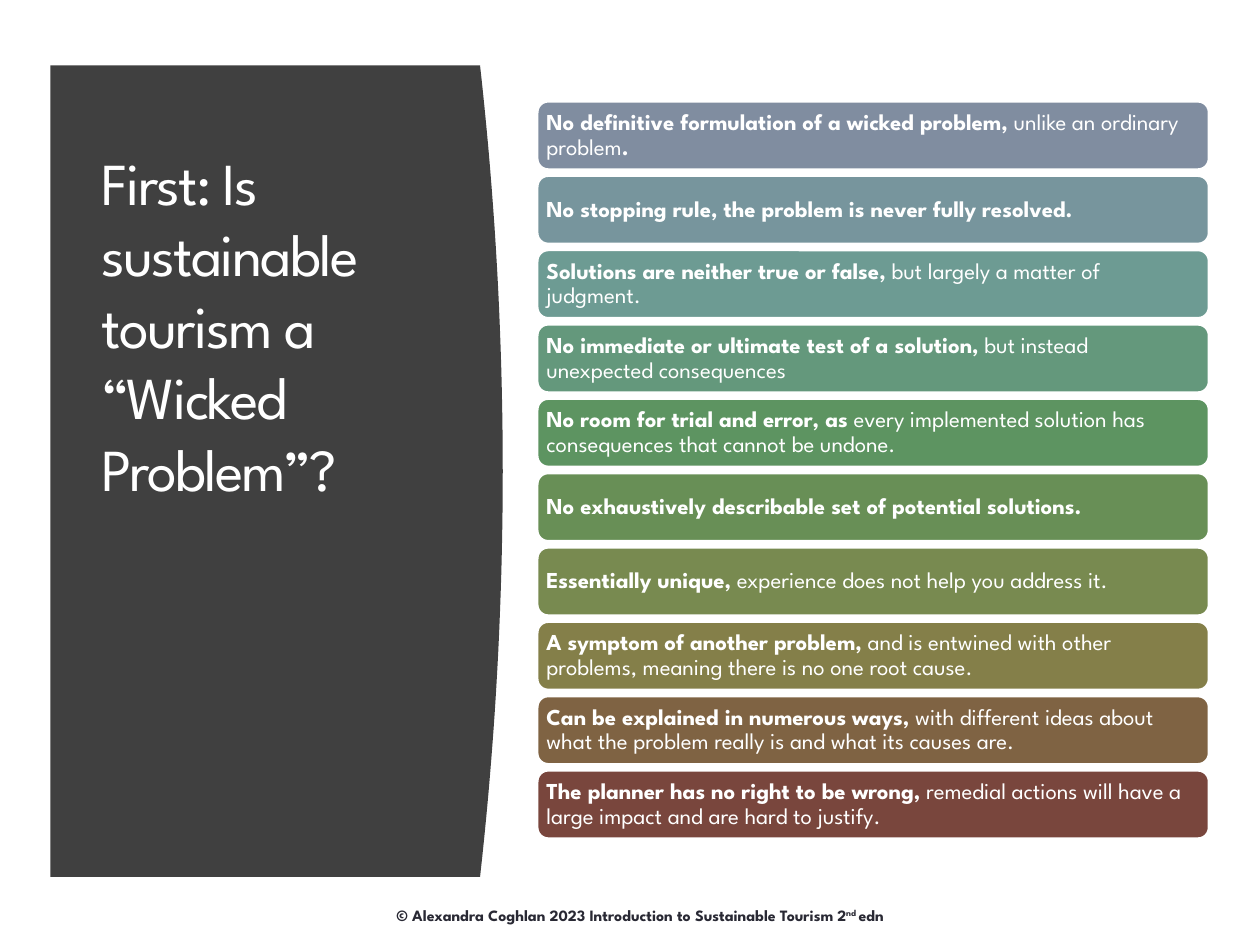
from dataclasses import dataclass

import pptx
import pptx.dml.color
import pptx.enum.shapes
import pptx.enum.text
import pptx.util

Inches = pptx.util.Inches
Pt = pptx.util.Pt
ALIGN = pptx.enum.text.PP_ALIGN
ANCHOR = pptx.enum.text.MSO_ANCHOR


@dataclass(frozen=True)
class Theme:
    font: str = "League Spartan"
    light: str = "FFFFFF"
    dark: str = "292934"
    panel: str = "404040"
    title_size: float = 34
    body_size: float = 13
    footer_size: float = 9


THEME = Theme()

# Band colour, bold lead, plain continuation, bold ending
TRAITS = [
    ("808DA0", "No definitive formulation of a wicked problem, ",
     "unlike an ordinary problem", "."),
    ("77959D", "No stopping rule, the problem is never fully resolved.", "", ""),
    ("6D9B93", "Solutions are neither true or false, ",
     "but largely a matter of judgment.", ""),
    ("64987C", "No immediate or ultimate test of a solution, ",
     "but instead unexpected consequences", ""),
    ("5D9461", "No room for trial and error, as ",
     "every implemented solution has consequences that cannot be undone.", ""),
    ("688F56", "No exhaustively describable set of potential solutions.", "", ""),
    ("788A50", "Essentially unique,",
     " experience does not help you address it.", ""),
    ("847F49", "A symptom of another problem, ",
     "and is entwined with other problems, meaning there is no one root cause.", ""),
    ("7F6343", "Can be explained in numerous ways, ",
     "with different ideas about what the problem really is "
     "and what its causes are.", ""),
    ("79463D", "The planner has no right to be wrong, ",
     "remedial actions will have a large impact and are hard to justify.", ""),
]


def rgb(code):
    return pptx.dml.color.RGBColor.from_string(code)


def apply(target, values):
    for name, value in values.items():
        setattr(target, name, value)


def add_run(paragraph, words, size, color, bold=False):
    run = paragraph.add_run()
    run.text = words
    apply(run.font, {"name": THEME.font, "size": Pt(size), "bold": bold})
    run.font.color.rgb = rgb(color)
    return run


def add_text_box(slide, left, top, width, height):
    box = slide.shapes.add_textbox(
        Inches(left), Inches(top), Inches(width), Inches(height))
    box.text_frame.word_wrap = True
    return box.text_frame.paragraphs[0]


def add_panel(slide, left=0.4, top=0.52, edge=3.81, bulge=0.18, height=6.44):
    """Draw the dark panel, its right edge bowed outwards as a parabola."""
    steps = 40
    curve = []
    for step in range(steps + 1):
        offset = 2 * step / steps - 1
        curve.append((Inches(edge + bulge * (1 - offset ** 2)),
                      Inches(top + height * step / steps)))
    outline = slide.shapes.build_freeform(Inches(left), Inches(top))
    outline.add_line_segments(curve + [(Inches(left), Inches(top + height))])
    panel = outline.convert_to_shape()
    panel.shadow.inherit = False
    panel.fill.solid()
    panel.fill.fore_color.rgb = rgb(THEME.panel)
    panel.line.fill.background()


def add_title(slide):
    paragraph = add_text_box(slide, 0.71, 1.11, 2.8, 5.24)
    title = add_run(paragraph, "First: Is sustainable tourism a “Wicked Problem”?",
                    THEME.title_size, THEME.light)
    title.font._element.set("spc", "-100")


def add_band(slide, top, color, lead, detail, ending):
    band = slide.shapes.add_shape(
        pptx.enum.shapes.MSO_SHAPE.ROUNDED_RECTANGLE,
        Inches(4.26), Inches(top), Inches(5.34), Inches(0.55))
    band.shadow.inherit = False
    band.fill.solid()
    band.fill.fore_color.rgb = rgb(color)
    band.line.color.rgb = rgb(THEME.light)
    band.line.width = Pt(2.08)
    inset = Inches(0.05)
    apply(band.text_frame, {
        "word_wrap": True, "vertical_anchor": ANCHOR.MIDDLE,
        "margin_left": inset, "margin_right": inset,
        "margin_top": inset, "margin_bottom": inset})
    paragraph = band.text_frame.paragraphs[0]
    apply(paragraph, {"alignment": ALIGN.LEFT, "line_spacing": 0.9})
    for words, bold in ((lead, True), (detail, False), (ending, True)):
        if words:
            add_run(paragraph, words, THEME.body_size, THEME.light, bold)


def add_footer(slide):
    paragraph = add_text_box(slide, 2.72, 7.14, 4.72, 0.25)
    paragraph.alignment = ALIGN.CENTER
    credit = "© Alexandra Coghlan 2023 Introduction to Sustainable Tourism 2"
    for words, raised in ((credit, False), ("nd ", True), ("edn", False)):
        run = add_run(paragraph, words, THEME.footer_size, THEME.dark, True)
        if raised:
            run.font._element.set("baseline", "30000")


def main():
    deck = pptx.Presentation()
    apply(deck, {"slide_width": Inches(10), "slide_height": Inches(7.5)})
    slide = deck.slides.add_slide(deck.slide_layouts[6])
    add_footer(slide)
    add_panel(slide)
    add_title(slide)
    for row, trait in enumerate(TRAITS):
        add_band(slide, 0.8 + 0.59 * row, *trait)
    deck.save("out.pptx")


if __name__ == "__main__":
    main()
